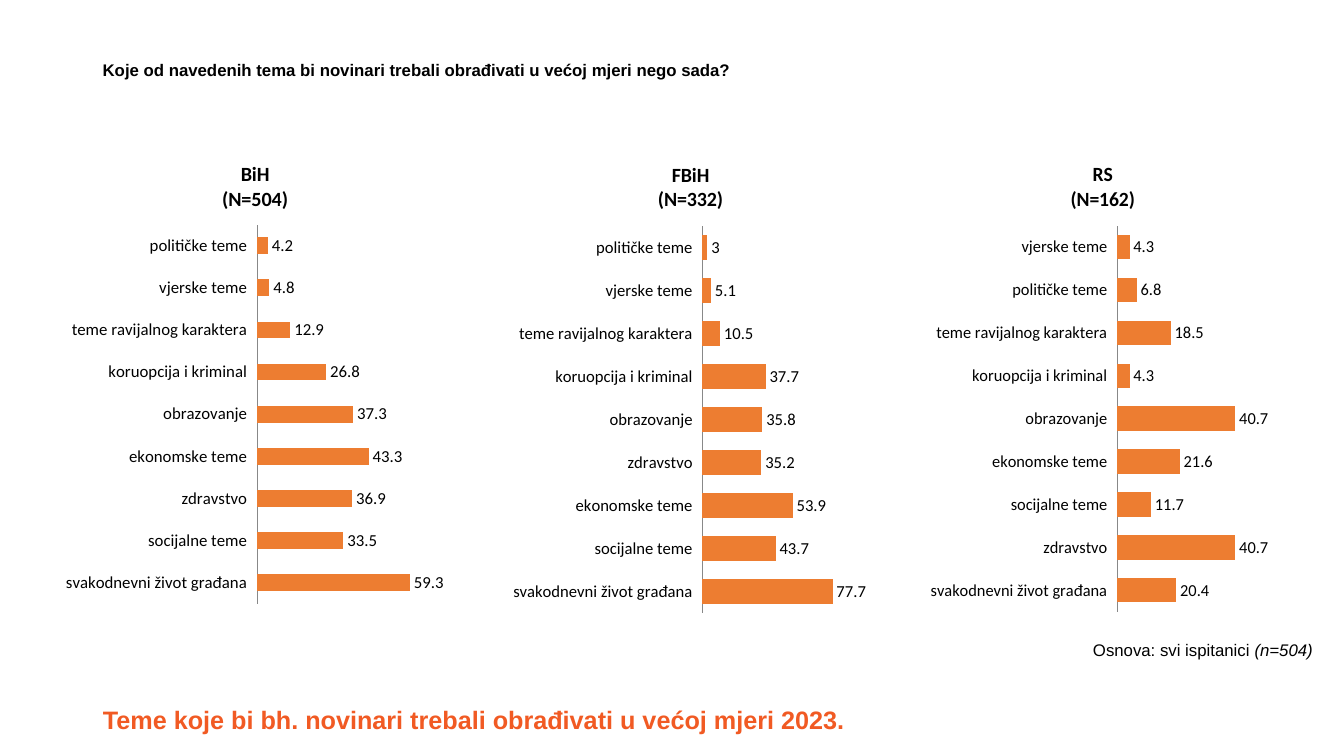
"""Build a slide comparing topics journalists should cover more, by region."""
from collections import namedtuple

from pptx import Presentation
from pptx.chart.data import CategoryChartData
from pptx.dml.color import RGBColor
from pptx.enum.chart import XL_CHART_TYPE, XL_LABEL_POSITION, XL_TICK_LABEL_POSITION, XL_TICK_MARK
from pptx.enum.text import MSO_ANCHOR, PP_ALIGN
from pptx.oxml import parse_xml
from pptx.oxml.ns import nsdecls, qn
from pptx.util import Inches, Pt

BLACK = RGBColor(0x00, 0x00, 0x00)
HEADLINE_ORANGE = RGBColor(0xF1, 0x5A, 0x23)
BAR_ORANGE = RGBColor(0xED, 0x7D, 0x31)
AXIS_GREY = RGBColor(0x88, 0x88, 0x88)

EVERYDAY = "svakodnevni život građana"
SOCIAL = "socijalne teme"
HEALTH = "zdravstvo"
ECONOMY = "ekonomske teme"
EDUCATION = "obrazovanje"
CRIME = "koruopcija i kriminal"
TRIVIAL = "teme ravijalnog karaktera"
RELIGION = "vjerske teme"
POLITICS = "političke teme"

Region = namedtuple("Region", "title frame plot gap maximum scores")

REGIONS = [
    Region("BiH\n(N=504)", (0.64, 1.42, 3.78, 4.67), (2.55, 2.23, 1.79, 3.76), 150, 70, {
        EVERYDAY: 59.3, SOCIAL: 33.5, HEALTH: 36.9, ECONOMY: 43.3, EDUCATION: 37.3,
        CRIME: 26.8, TRIVIAL: 12.9, RELIGION: 4.8, POLITICS: 4.2}),
    Region("FBiH\n(N=332)", (5.09, 1.42, 3.5, 4.77), (6.96, 2.24, 1.51, 3.84), 75, 90, {
        EVERYDAY: 77.7, SOCIAL: 43.7, ECONOMY: 53.9, HEALTH: 35.2, EDUCATION: 35.8,
        CRIME: 37.7, TRIVIAL: 10.5, RELIGION: 5.1, POLITICS: 3}),
    Region("RS\n(N=162)", (9.23, 1.42, 3.35, 4.75), (11.05, 2.24, 1.33, 3.83), 75, 45, {
        EVERYDAY: 20.4, HEALTH: 40.7, SOCIAL: 11.7, ECONOMY: 21.6, EDUCATION: 40.7,
        CRIME: 4.3, TRIVIAL: 18.5, POLITICS: 6.8, RELIGION: 4.3}),
]


def format_font(font, color=BLACK, **values):
    for name, value in values.items():
        setattr(font, name, value)
    font.color.rgb = color


def write_text(box, spans, align=PP_ALIGN.LEFT, **shared):
    frame = box.text_frame
    frame.word_wrap = True
    frame.vertical_anchor = MSO_ANCHOR.TOP
    para = frame.paragraphs[0]
    para.alignment = align
    for text, own in spans:
        span = para.add_run()
        span.text = text
        format_font(span.font, name="Arial", **shared, **own)


def add_text(page, frame, spans, **values):
    box = page.shapes.add_textbox(*map(Inches, frame))
    write_text(box, spans, **values)


def place_title(page, frame, text):
    title = page.shapes.title
    for name, value in zip(("left", "top", "width", "height"), frame):
        setattr(title, name, Inches(value))
    write_text(title, [(text, {})], size=Pt(18), bold=True, color=HEADLINE_ORANGE)


def place_plot(chart, frame, plot):
    left, top, width, height = frame
    shares = {"x": (plot[0] - left) / width, "y": (plot[1] - top) / height,
              "w": plot[2] / width, "h": plot[3] / height}
    sizes = "".join(f'<c:{name} val="{share:.4f}"/>' for name, share in shares.items())
    area = chart.element.find(".//" + qn("c:plotArea"))
    for layout in area.findall(qn("c:layout")):
        area.remove(layout)
    area.insert(0, parse_xml(
        f'<c:layout {nsdecls("c")}><c:manualLayout><c:layoutTarget val="inner"/>'
        f'<c:xMode val="edge"/><c:yMode val="edge"/>{sizes}</c:manualLayout></c:layout>'))


def style_axes(chart, maximum):
    topics = chart.category_axis
    topics.major_tick_mark = topics.minor_tick_mark = XL_TICK_MARK.NONE
    topics.tick_label_position = XL_TICK_LABEL_POSITION.LOW
    topics.has_major_gridlines = False
    topics.format.line.color.rgb = AXIS_GREY
    topics.format.line.width = Pt(0.75)
    format_font(topics.tick_labels.font, name="Calibri", size=Pt(12))
    scores = chart.value_axis
    scores.visible = False
    scores.has_major_gridlines = False
    scores.minimum_scale = 0
    scores.maximum_scale = maximum


def style_bars(chart, gap):
    bars = chart.plots[0]
    bars.gap_width = gap
    bars.overlap = -25
    bars.vary_by_categories = False
    bars.series[0].format.fill.solid()
    bars.series[0].format.fill.fore_color.rgb = BAR_ORANGE
    bars.has_data_labels = True
    labels = bars.data_labels
    labels.show_value = True
    labels.number_format = "General"
    labels.number_format_is_linked = False
    labels.position = XL_LABEL_POSITION.OUTSIDE_END
    format_font(labels.font, name="Calibri", size=Pt(12))


def add_region_chart(page, region):
    data = CategoryChartData()
    data.categories = region.scores.keys()
    data.add_series("Series 1", region.scores.values())
    chart = page.shapes.add_chart(
        XL_CHART_TYPE.BAR_CLUSTERED, *map(Inches, region.frame), data).chart
    format_font(chart.font, name="Calibri", size=Pt(12))
    chart.has_legend = False
    chart.has_title = True
    title = chart.chart_title
    title.include_in_layout = False
    title.text_frame.text = region.title
    for para in title.text_frame.paragraphs:
        for span in para.runs:
            format_font(span.font, name="Calibri", size=Pt(14.4), bold=True)
    style_axes(chart, region.maximum)
    style_bars(chart, region.gap)
    place_plot(chart, region.frame, region.plot)


def main():
    deck = Presentation()
    deck.slide_width, deck.slide_height = Inches(13.33), Inches(7.5)
    page = deck.slides.add_slide(deck.slide_layouts.get_by_name("Title Only"))
    place_title(page, (0.92, 6.94, 9.52, 0.4),
                "Teme koje bi bh. novinari trebali obrađivati u većoj mjeri 2023.")
    add_text(page, (0.92, 6.3, 12.2, 0.5),
             [("Osnova: svi ispitanici ", {}), ("(n=504)", {"italic": True})],
             align=PP_ALIGN.RIGHT, size=Pt(12))
    add_text(page, (0.92, 0.54, 11.23, 0.3),
             [("Koje od navedenih tema bi novinari trebali obrađivati u većoj mjeri nego sada?", {})],
             size=Pt(12), bold=True)
    for region in REGIONS:
        add_region_chart(page, region)
    deck.save("out.pptx")


if __name__ == "__main__":
    main()
